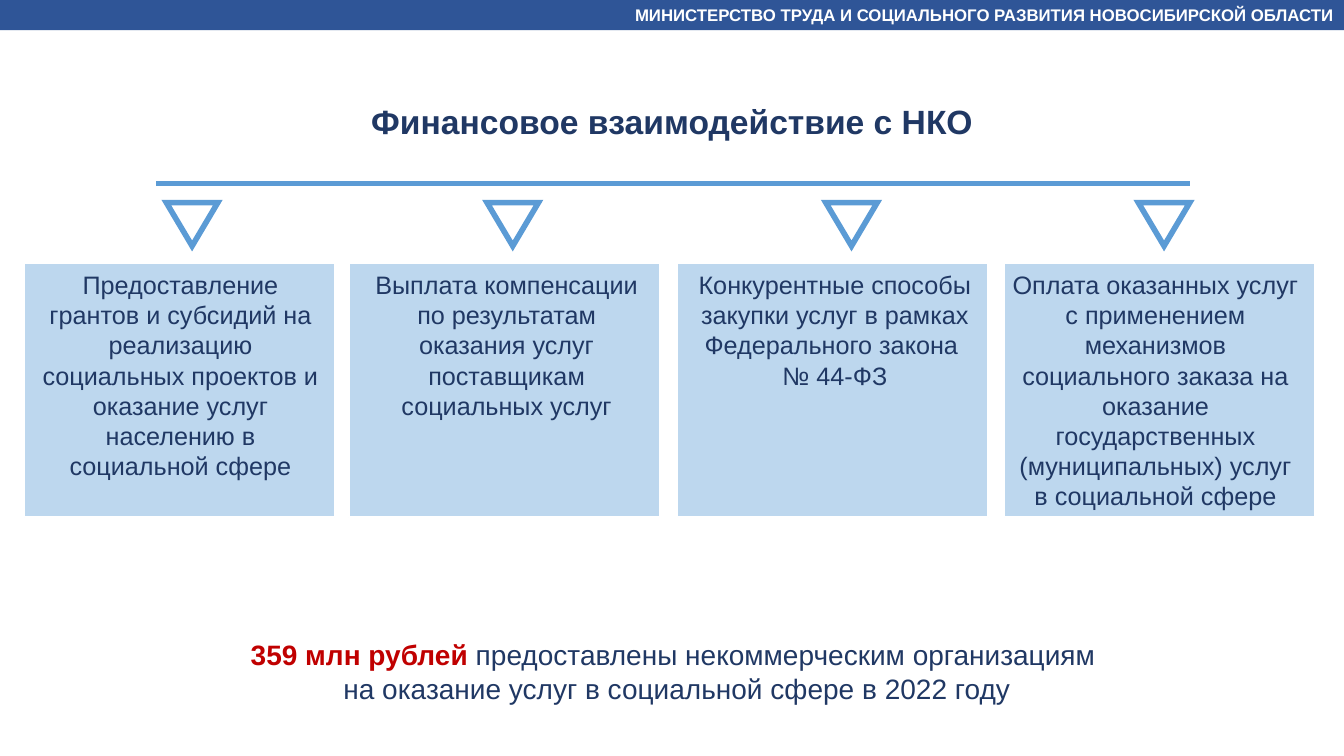
from lxml import etree
from pptx import Presentation
from pptx.dml.color import RGBColor
from pptx.enum.shapes import MSO_CONNECTOR, MSO_SHAPE
from pptx.enum.text import MSO_ANCHOR, MSO_AUTO_SIZE, PP_ALIGN
from pptx.oxml.ns import qn
from pptx.util import Pt

# Content
MINISTRY = "МИНИСТЕРСТВО ТРУДА И СОЦИАЛЬНОГО РАЗВИТИЯ НОВОСИБИРСКОЙ ОБЛАСТИ"
TITLE = "Финансовое взаимодействие с НКО"
# Card left, label left, label width, arrow left, space after, paragraphs
COLUMNS = [
    (24, 38, 282, 165, 12, ["Предоставление грантов и субсидий на реализацию социальных "
                            "проектов и оказание услуг населению в социальной сфере"]),
    (346, 361, 283, 483, 12, ["Выплата компенсации по результатам оказания услуг "
                              "поставщикам социальных услуг"]),
    (672, 684, 288, 819, 0, ["Конкурентные способы закупки услуг в рамках Федерального закона ",
                             "№ 44-ФЗ"]),
    (996, 1004, 284, 1129, 0, ["Оплата оказанных услуг с применением механизмов социального "
                               "заказа на оказание государственных (муниципальных) услуг "
                               "в социальной сфере"]),
]
AMOUNT = "359 млн рублей "
SUMMARY = ["предоставлены некоммерческим организациям ",
           "на оказание услуг в социальной сфере в 2022 году"]

# Formats
WHITE = RGBColor(0xFF, 0xFF, 0xFF)
BAND_BLUE = RGBColor(0x2F, 0x55, 0x97)
NAVY = RGBColor(0x20, 0x38, 0x64)
PALE_BLUE = RGBColor(0xBD, 0xD7, 0xEE)
BLUE = RGBColor(0x5B, 0x9B, 0xD5)
RED = RGBColor(0xC0, 0x00, 0x00)
BAND_FONT = {"size": Pt(12), "bold": True, "color": WHITE}
TITLE_FONT = {"size": Pt(24), "bold": True, "color": NAVY}
CARD_FONT = {"size": Pt(18), "bold": False, "color": NAVY}
SUMMARY_FONT = {"size": Pt(20), "bold": False, "color": NAVY}
AMOUNT_FONT = {"size": Pt(20), "bold": True, "color": RED}

# Geometry: 100 px to the inch
PX = 9144
WIDTH, HEIGHT = 1333, 750
CARD_TOP, CARD_WIDTH, CARD_HEIGHT = 261, 308, 252
ARROW_TOP, ARROW_WIDTH, ARROW_HEIGHT = 201, 51, 43
RULE_LEFT, RULE_RIGHT, RULE_Y = 155, 1180, 182


def scaled(*lengths):
    return [length * PX for length in lengths]


def add_run(paragraph, text, font_format):
    run = paragraph.add_run()
    run.text = text
    run.font.name = "Arial"
    for name, value in font_format.items():
        if name == "color":
            run.font.color.rgb = value
        else:
            setattr(run.font, name, value)


def write(shape, paragraphs, align=PP_ALIGN.CENTER, space_after=0, **frame_format):
    """Fill a shape with paragraphs, each a list of (text, font format) runs."""
    frame = shape.text_frame
    settings = {"word_wrap": True, "vertical_anchor": MSO_ANCHOR.TOP, **frame_format}
    for name, value in settings.items():
        setattr(frame, name, value)
    for index, runs in enumerate(paragraphs):
        paragraph = frame.add_paragraph() if index else frame.paragraphs[0]
        paragraph.alignment = align
        paragraph.space_before = Pt(0)
        paragraph.space_after = Pt(space_after)
        for text, font_format in runs:
            add_run(paragraph, text, font_format)


def add_box(kind, box, fill, line=None, line_width=1):
    shape = slide.shapes.add_shape(kind, *scaled(*box))
    shape.shadow.inherit = False
    shape.fill.solid()
    shape.fill.fore_color.rgb = fill
    if line is None:
        shape.line.fill.background()
    else:
        shape.line.color.rgb = line
        shape.line.width = Pt(line_width)
    return shape


presentation = Presentation()
presentation.slide_width, presentation.slide_height = scaled(WIDTH, HEIGHT)
slide = presentation.slides.add_slide(presentation.slide_layouts[5])
GROW = {"auto_size": MSO_AUTO_SIZE.SHAPE_TO_FIT_TEXT}

# Ministry band
band = add_box(MSO_SHAPE.RECTANGLE, (0, 0, WIDTH, 30), BAND_BLUE)
write(band, [[(MINISTRY, BAND_FONT)]], PP_ALIGN.RIGHT, **GROW)

# Title
title = slide.shapes.title
title.left, title.top, title.width, title.height = scaled(0, 95, WIDTH, 50)
write(title, [[(TITLE, TITLE_FONT)]], **GROW)

# Rule above the arrows
rule = slide.shapes.add_connector(
    MSO_CONNECTOR.STRAIGHT, *scaled(RULE_LEFT, RULE_Y, RULE_RIGHT, RULE_Y))
rule.line.color.rgb = BLUE
rule.line.width = Pt(4)
etree.SubElement(rule._element.spPr, qn("a:effectLst"))

# Columns: card, label and arrow
for card_left, label_left, label_width, arrow_left, space_after, lines in COLUMNS:
    add_box(MSO_SHAPE.RECTANGLE, (card_left, CARD_TOP, CARD_WIDTH, CARD_HEIGHT),
            PALE_BLUE, WHITE)
    label = slide.shapes.add_textbox(
        *scaled(label_left, CARD_TOP, label_width, CARD_HEIGHT))
    write(label, [[(line, CARD_FONT)] for line in lines], space_after=space_after,
          margin_left=0, margin_right=0, margin_top=6 * PX, margin_bottom=0)
    arrow = add_box(MSO_SHAPE.FLOWCHART_EXTRACT,
                    (arrow_left, ARROW_TOP, ARROW_WIDTH, ARROW_HEIGHT), WHITE, BLUE, 4)
    arrow.rotation = 180
    etree.SubElement(arrow.line._get_or_add_ln(), qn("a:miter"), lim="800000")

# Summary
summary = slide.shapes.add_textbox(*scaled(25, 628, 1293, 77))
write(summary, [[(AMOUNT, AMOUNT_FONT), (SUMMARY[0], SUMMARY_FONT)],
                [(SUMMARY[1], SUMMARY_FONT)]], **GROW)

presentation.save("out.pptx")
